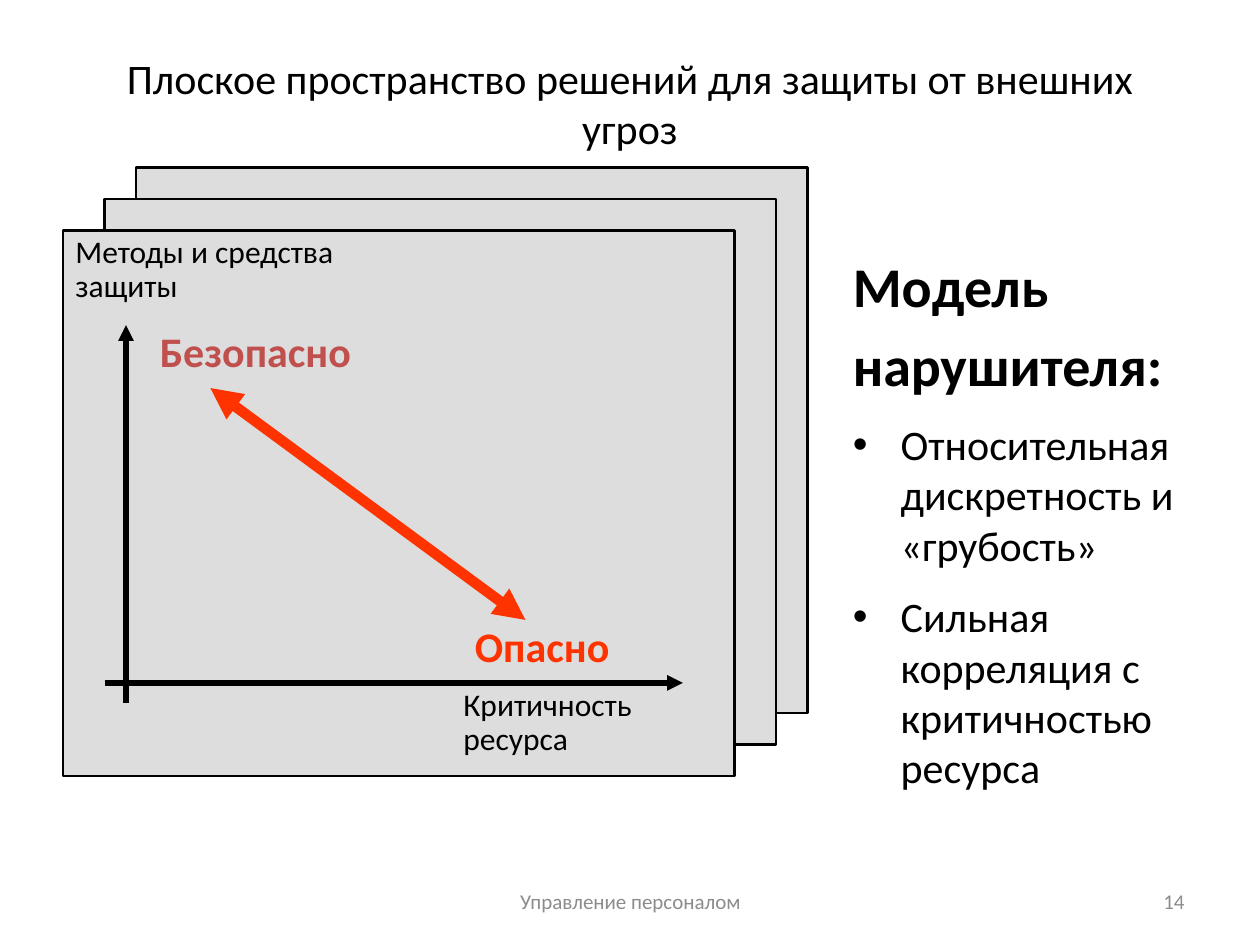
from dataclasses import dataclass

from lxml import etree
from pptx import Presentation
from pptx import util as u
from pptx.dml.color import RGBColor
from pptx.enum import shapes, text
from pptx.oxml import ns

AL, ANCHOR = text.PP_ALIGN, text.MSO_ANCHOR


@dataclass(frozen=True)
class Theme:
    font: str = "Calibri"
    ink: str = "000000"
    panel: str = "DDDDDD"
    danger: str = "FF3300"
    safe: str = "C0504D"
    muted: str = "8C8C8C"
    heading: int = 32
    title: int = 24
    label: int = 18
    footer: int = 12


T = Theme()


def write(p, words, size, color=T.ink, bold=False, **paragraph):
    """Fill a paragraph and format it and its runs."""
    p.text = words
    for name, value in paragraph.items():
        setattr(p, name, value)
    for r in p.runs:
        r.font.color.rgb = RGBColor.from_string(color)
        for name, value in {"name": T.font, "size": u.Pt(size), "bold": bold}.items():
            setattr(r.font, name, value)


def text_box(slide, box, anchor=ANCHOR.TOP):
    tf = slide.shapes.add_textbox(*map(u.Inches, box)).text_frame
    tf.word_wrap, tf.vertical_anchor = True, anchor
    return tf


def set_indent(p, hang, bullet=None):
    pPr = p._p.get_or_add_pPr()
    pPr.set("marL", str(u.Inches(hang)))
    pPr.set("indent", str(-u.Inches(hang)))
    if bullet:
        etree.SubElement(pPr, ns.qn("a:buFont"), typeface="Arial")
        etree.SubElement(pPr, ns.qn("a:buChar"), char=bullet)


def add_arrow(slide, start, end, color, width, ends=("tailEnd",)):
    points = map(u.Inches, (*start, *end))
    line = slide.shapes.add_connector(shapes.MSO_CONNECTOR.STRAIGHT, *points)
    line.line.color.rgb = RGBColor.from_string(color)
    line.line.width = u.Pt(width)
    ln = line.line._get_or_add_ln()
    for tag in ends:
        etree.SubElement(ln, ns.qn(f"a:{tag}"), type="triangle")
    etree.SubElement(line._element.spPr, ns.qn("a:effectLst"))


def add_title(slide, box, words):
    sp = slide.shapes.title
    for name, value in zip(("left", "top", "width", "height"), box):
        setattr(sp, name, u.Inches(value))
    tf = sp.text_frame
    tf.word_wrap, tf.vertical_anchor = True, ANCHOR.MIDDLE
    write(tf.paragraphs[0], words, T.title, alignment=AL.CENTER)


def add_decision_space(slide, box):
    """Stacked sheets, the front one holding a pair of axes."""
    x, y, w, h = box
    # Sheets, back to front
    for dx, dy in ((0.58, -0.5), (0.33, -0.25), (0, 0)):
        sp = slide.shapes.add_shape(shapes.MSO_SHAPE.RECTANGLE,
                                    *map(u.Inches, (x + dx, y + dy, w, h)))
        sp.shadow.inherit = False
        sp.fill.solid()
        sp.fill.fore_color.rgb = RGBColor.from_string(T.panel)
        sp.line.color.rgb = RGBColor.from_string(T.ink)
        sp.line.width = u.Pt(1.5)
    # Axes and the safe-to-dangerous arrow
    add_arrow(slide, (x + 0.5, y + 3.75), (x + 0.5, y + 0.75), T.ink, 3)
    add_arrow(slide, (x + 0.33, y + 3.59), (x + 4.92, y + 3.59), T.ink, 3)
    add_arrow(slide, (x + 1.17, y + 1.25), (x + 3.67, y + 3.09), T.danger, 6,
              ("headEnd", "tailEnd"))
    # Axis names and end labels
    labels = (
        ("Критичность\vресурса", (3.08, 3.59, 2.17, 0.7), T.label, T.ink, False),
        ("Методы и средства защиты", (0, 0, 2.58, 0.7), T.label, T.ink, False),
        ("Безопасно", (0.67, 0.75, 2.08, 0.46), T.title, T.safe, True),
        ("Опасно", (3.17, 3.09, 1.75, 0.46), T.title, T.danger, True),
    )
    for words, (dx, dy, lw, lh), size, color, bold in labels:
        tf = text_box(slide, (x + dx, y + dy, lw, lh))
        write(tf.paragraphs[0], words, size, color, bold, line_spacing=0.9)


def add_offender_model(slide, box, heading, points):
    tf = text_box(slide, box)
    rows = [(words, T.heading, True, 0.2, None) for words in heading]
    rows += [(words, T.title, False, 0.5, "•") for words in points]
    for i, (words, size, bold, gap, bullet) in enumerate(rows):
        p = tf.add_paragraph() if i else tf.paragraphs[0]
        write(p, words, size, bold=bold, space_before=u.Pt(size * gap))
        set_indent(p, 0.38, bullet)


def add_footer(slide, box, words, number):
    x, y, w, h = box
    for item, dx, width, align in ((words, 0, 3.17, AL.CENTER),
                                   (number, w - 2.33, 2.33, AL.RIGHT)):
        tf = text_box(slide, (x + dx, y, width, h), ANCHOR.MIDDLE)
        write(tf.paragraphs[0], item, T.footer, T.muted, alignment=align)


def main():
    prs = Presentation()
    prs.slide_width, prs.slide_height = u.Inches(10), u.Inches(7.5)
    slide = prs.slides.add_slide(prs.slide_layouts[5])
    add_title(slide, (0.5, 0.3, 9, 1.03),
              "Плоское пространство решений для защиты от внешних угроз")
    add_offender_model(slide, (6.67, 1.95, 3.17, 4.41),
                       ("Модель", "нарушителя:"),
                       ("Относительная дискретность и «грубость»",
                        "Сильная корреляция с критичностью ресурса"))
    add_decision_space(slide, (0.5, 1.83, 5.33, 4.33))
    add_footer(slide, (3.42, 6.95, 6.08, 0.4), "Управление персоналом", "14")
    prs.save("out.pptx")


if __name__ == "__main__":
    main()
